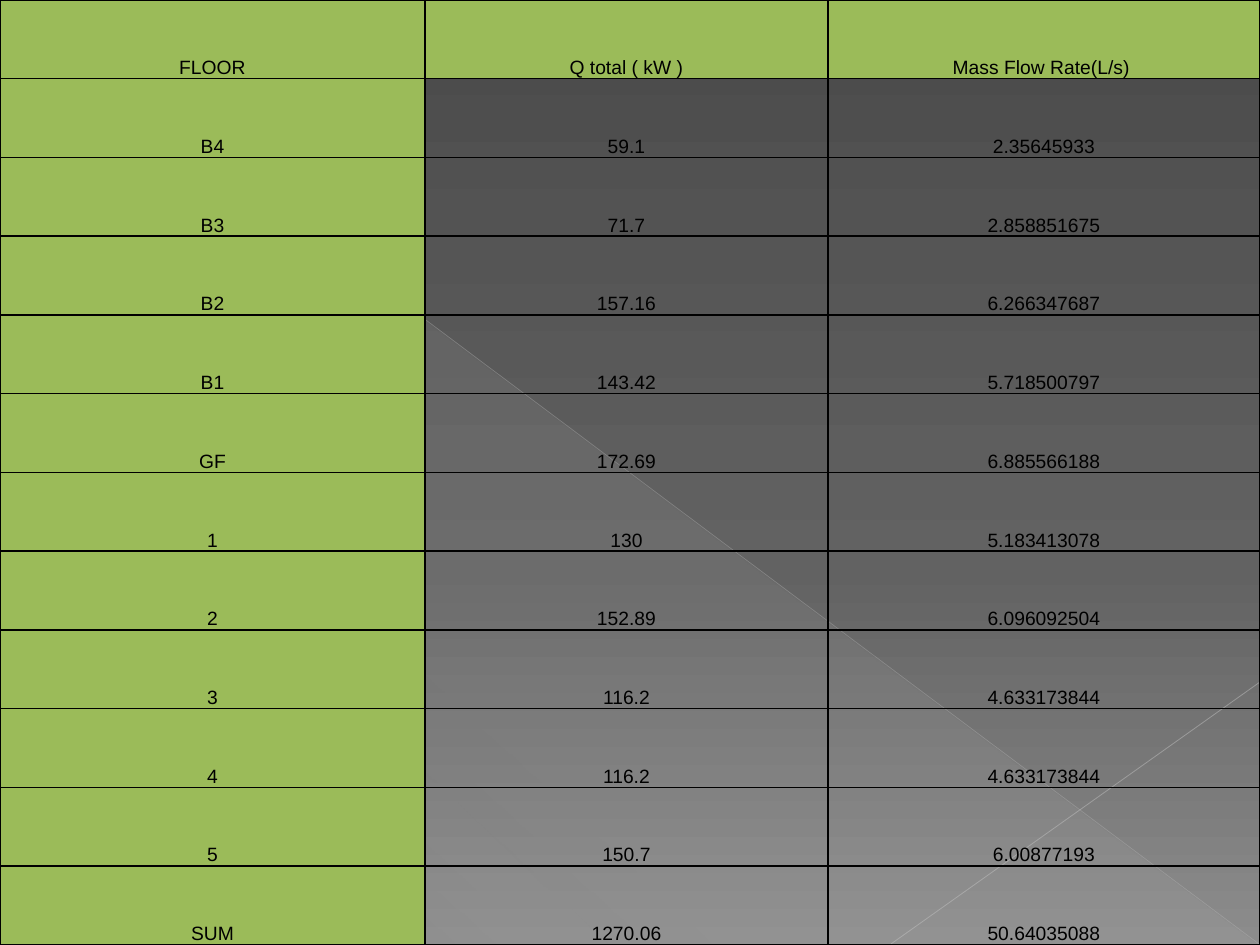
"""Build a slide with a floor-by-floor table of heat load and mass flow rate."""
from lxml.etree import SubElement
from pptx import Presentation
from pptx.dml.color import RGBColor
from pptx.enum.shapes import MSO_CONNECTOR, MSO_SHAPE
from pptx.enum.text import MSO_ANCHOR, PP_ALIGN
from pptx.oxml import parse_xml
from pptx.oxml.ns import nsdecls, qn
from pptx.util import Emu, Pt

WIDTH, HEIGHT = 1260, 945
COLS = [425, 403, 432]
ROWS = [
    ("FLOOR", "Q total ( kW )", "Mass Flow Rate(L/s) "),
    ("B4", "59.1", "2.35645933"),
    ("B3", "71.7", "2.858851675"),
    ("B2", "157.16", "6.266347687"),
    ("B1", "143.42", "5.718500797"),
    ("GF", "172.69", "6.885566188"),
    ("1", "130", "5.183413078"),
    ("2", "152.89", "6.096092504"),
    ("3", "116.2", "4.633173844"),
    ("4", "116.2", "4.633173844"),
    ("5", "150.7", "6.00877193"),
    ("SUM", "1270.06", "50.64035088"),
]
BACK = [(0, "4A4A4A", 100), (60, "626262", 100), (100, "8C8C8C", 100)]
SHEEN = [(0, "D2D2D2", 10), (70, "D2D2D2", 8), (100, "D2D2D2", 1)]
LINES = [
    ((0, 1, 1259, 944), "BFBFBF", 0.39, 35),
    ((1260, 682, 891, 944), "C6C6C6", 0.47, 45),
]
GREEN, BLACK = "9BBB59", "000000"


def px(num):
    return Emu(round(num * 914400 / 126))


def color(code):
    return RGBColor.from_string(code)


def fade(owner, stops, angle):
    grad = next(owner.iter(qn("a:gradFill")))
    for child in list(grad):
        grad.remove(child)
    group = SubElement(grad, qn("a:gsLst"))
    for place, code, alpha in stops:
        stop = SubElement(group, qn("a:gs"), pos=str(place * 1000))
        tint = SubElement(stop, qn("a:srgbClr"), val=code)
        SubElement(tint, qn("a:alpha"), val=str(alpha * 1000))
    SubElement(grad, qn("a:lin"), ang=str(angle * 60000), scaled="0")


def add_back(slide):
    slide.background.fill.gradient()
    fade(slide.element, BACK, 90)
    sheen = slide.shapes.add_shape(
        MSO_SHAPE.RIGHT_TRIANGLE, px(1), px(2), px(1258), px(943))
    sheen.shadow.inherit = False
    sheen.line.fill.background()
    sheen.fill.gradient()
    fade(sheen.element, SHEEN, 133)
    for ends, code, width, alpha in LINES:
        line = slide.shapes.add_connector(MSO_CONNECTOR.STRAIGHT, *map(px, ends))
        line.line.color.rgb = color(code)
        line.line.width = Pt(width)
        tint = next(line.element.spPr.iter(qn("a:srgbClr")))
        SubElement(tint, qn("a:alpha"), val=str(alpha * 1000))
        SubElement(line.element.spPr, qn("a:effectLst"))


def add_edges(cell):
    props = cell._tc.get_or_add_tcPr()
    for index, side in enumerate("LRTB"):
        props.insert(index, parse_xml(
            f'<a:ln{side} {nsdecls("a")} w="12700"><a:solidFill>'
            f'<a:srgbClr val="{BLACK}"/></a:solidFill></a:ln{side}>'))


def set_cell(cell, text, filled):
    cell.text_frame.text = text
    cell.vertical_anchor = MSO_ANCHOR.BOTTOM
    cell.margin_left = cell.margin_right = px(9)
    cell.margin_top = cell.margin_bottom = 0
    if filled:
        cell.fill.solid()
        cell.fill.fore_color.rgb = color(GREEN)
    else:
        cell.fill.background()
    para = cell.text_frame.paragraphs[0]
    para.alignment = PP_ALIGN.CENTER
    para.line_spacing = 1.15
    font = para.runs[0].font
    font.name, font.size, font.bold = "Arial", Pt(11), False
    font.color.rgb = color(BLACK)
    add_edges(cell)


def add_grid(slide):
    table = slide.shapes.add_table(
        len(ROWS), len(COLS), 0, 0, px(WIDTH), px(HEIGHT)).table
    for col, width in zip(table.columns, COLS):
        col.width = px(width)
    for r, values in enumerate(ROWS):
        table.rows[r].height = px(HEIGHT / len(ROWS))
        for c, text in enumerate(values):
            set_cell(table.cell(r, c), text, r == 0 or c == 0)


def main():
    deck = Presentation()
    deck.slide_width, deck.slide_height = px(WIDTH), px(HEIGHT)
    slide = deck.slides.add_slide(deck.slide_layouts[6])
    add_back(slide)
    add_grid(slide)
    deck.save("out.pptx")


if __name__ == "__main__":
    main()
